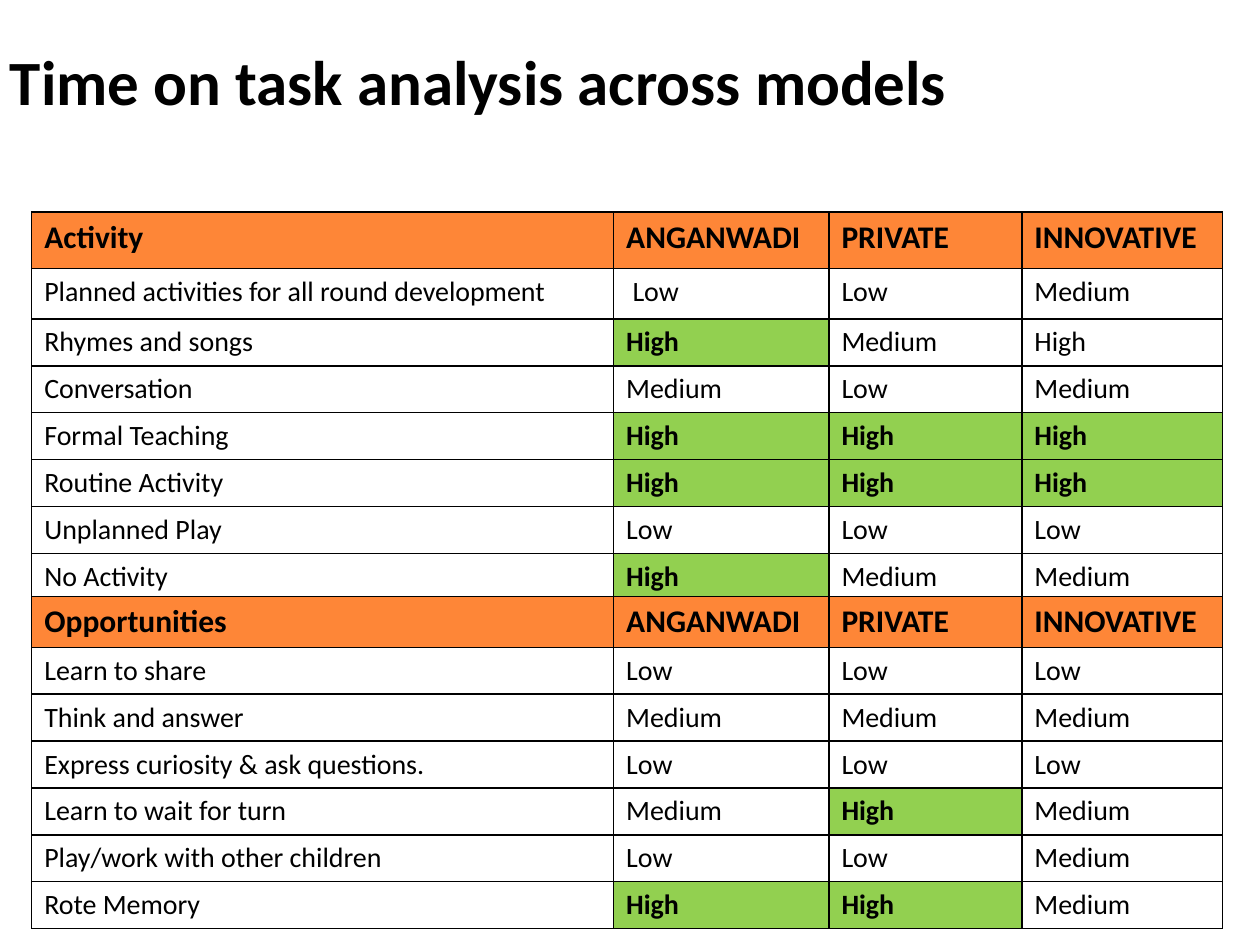
import pptx
import pptx.dml.color
import pptx.enum.text
import pptx.oxml
import pptx.oxml.ns
import pptx.util
from pptx.util import Cm

BLACK = pptx.dml.color.RGBColor(0x00, 0x00, 0x00)
ORANGE = pptx.dml.color.RGBColor(0xFE, 0x86, 0x37)
GREEN = pptx.dml.color.RGBColor(0x92, 0xD0, 0x50)

MODELS = ("ANGANWADI", "PRIVATE", "INNOVATIVE")
COLUMN_WIDTHS = (11.73, 4.34, 3.89, 4.04)
ROW_HEIGHT = 0.94
PLAIN_HIGH = ("Rhymes and songs", 3)

ACTIVITIES = [
    ("Activity", *MODELS),
    ("Planned activities for all round development", " Low", "Low", "Medium"),
    ("Rhymes and songs", "High", "Medium", "High"),
    ("Conversation", "Medium", "Low", "Medium"),
    ("Formal Teaching", "High", "High", "High"),
    ("Routine Activity", "High", "High", "High"),
    ("Unplanned Play", "Low", "Low", "Low"),
    ("No Activity", "High", "Medium", "Medium"),
]
OPPORTUNITIES = [
    ("Opportunities", *MODELS),
    ("Learn to share", "Low", "Low", "Low"),
    ("Think and answer", "Medium", "Medium", "Medium"),
    ("Express curiosity & ask questions.", "Low", "Low", "Low"),
    ("Learn to wait for turn", "Medium", "High", "Medium"),
    ("Play/work with other children", "Low", "Low", "Medium"),
    ("Rote Memory", "High", "High", "Medium"),
]


def write(frame, text, size=16, bold=False, color=BLACK):
    para = frame.paragraphs[0]
    para.alignment = pptx.enum.text.PP_ALIGN.LEFT
    span = para.add_run()
    span.text = text
    span.font.name = "Calibri"
    span.font.size = pptx.util.Pt(size)
    span.font.bold = bold
    span.font.color.rgb = color


def add_borders(cell):
    properties = cell._tc.get_or_add_tcPr()
    for side in ("lnL", "lnR", "lnT", "lnB"):
        properties.append(pptx.oxml.parse_xml(
            f'<a:{side} {pptx.oxml.ns.nsdecls("a")} w="12700">'
            f'<a:solidFill><a:srgbClr val="{BLACK}"/></a:solidFill></a:{side}>'))


deck = pptx.Presentation()
deck.slide_width = Cm(25.4)
deck.slide_height = Cm(19.05)
page = deck.slides.add_slide(deck.slide_layouts[5])

title = page.shapes.title
title.left, title.top, title.width, title.height = Cm(0.2), Cm(0), Cm(22.86), Cm(2.39)
title_frame = title.text_frame
title_frame.margin_left = title_frame.margin_right = title_frame.margin_bottom = Cm(0)
title_frame.margin_top = Cm(0.13)
title_frame.vertical_anchor = pptx.enum.text.MSO_ANCHOR.BOTTOM
write(title_frame, "Time on task analysis across models", size=36, bold=True)

for top, first_heights, ratings in (
    (4.27, (1.14, 1.02), ACTIVITIES),
    (12.02, (1.03,), OPPORTUNITIES),
):
    heights = [*first_heights] + [ROW_HEIGHT] * (len(ratings) - len(first_heights))
    table = page.shapes.add_table(
        len(ratings), len(COLUMN_WIDTHS), Cm(0.64), Cm(top),
        Cm(sum(COLUMN_WIDTHS)), Cm(sum(heights))).table
    table.first_row = False
    table.horz_banding = False
    for column, width in zip(table.columns, COLUMN_WIDTHS):
        column.width = Cm(width)
    for row_number, (row, height, values) in enumerate(zip(table.rows, heights, ratings)):
        row.height = Cm(height)
        header = row_number == 0
        for column_number, (cell, value) in enumerate(zip(row.cells, values)):
            high = value == "High" and (values[0], column_number) != PLAIN_HIGH
            write(cell.text_frame, value, size=18 if header else 16, bold=header or high)
            add_borders(cell)
            if header or high:
                cell.fill.solid()
                cell.fill.fore_color.rgb = ORANGE if header else GREEN
            else:
                cell.fill.background()

deck.save("out.pptx")
